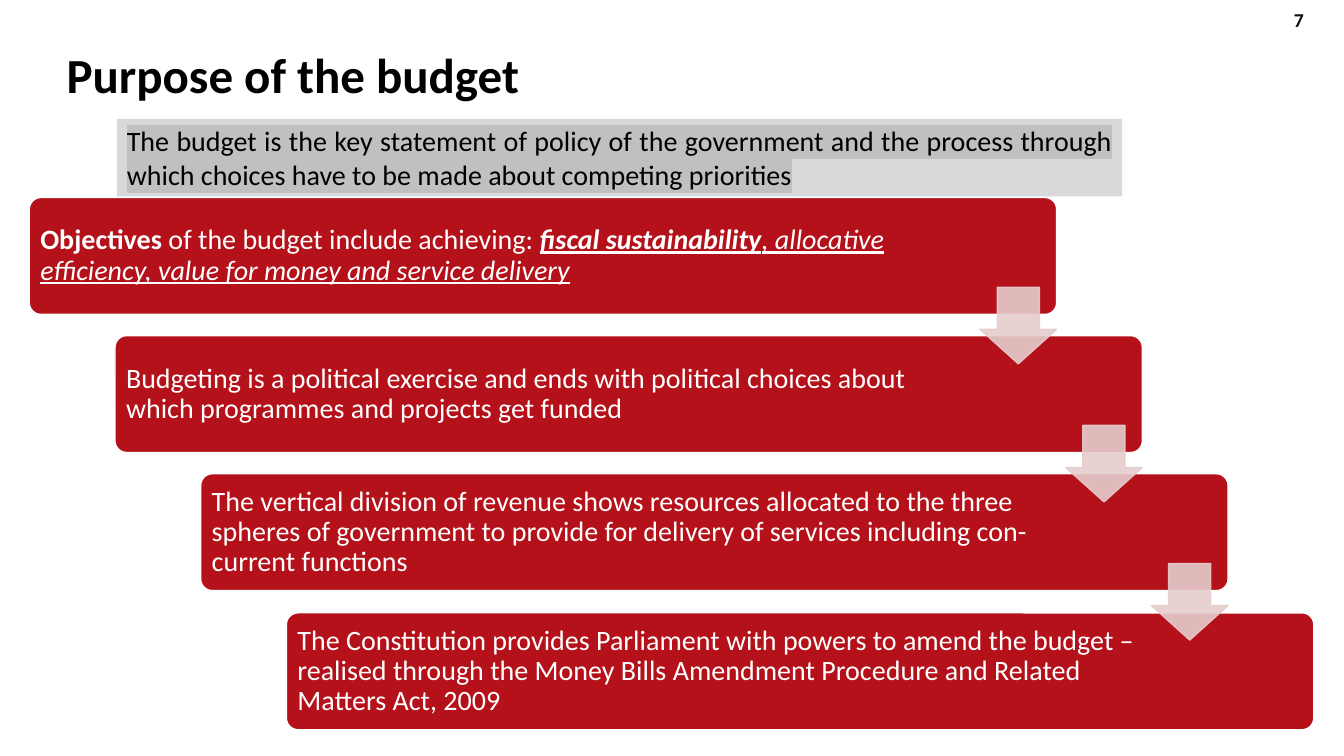
from lxml.etree import SubElement
from pptx import Presentation
from pptx.dml.color import RGBColor
from pptx.enum.shapes import MSO_SHAPE
from pptx.enum.text import MSO_ANCHOR, MSO_AUTO_SIZE, PP_ALIGN
from pptx.oxml import parse_xml
from pptx.oxml.ns import nsdecls, qn
from pptx.util import Pt

EMU_PER_PX = 9144
COLOURS = {
    "black": "000000",
    "page number": "0D0D0D",
    "white": "FFFFFF",
    "card": "B5111A",
    "arrow": "E5CCCD",
    "panel": "D9D9D9",
    "highlight": "C0C0C0",
}
STATEMENT = (
    "The budget is the key statement of policy of the government and the process "
    "through which choices have to be made about competing priorities"
)
# Each step is a list of (text, styles): b is bold, i italic, u underlined.
STEPS = [
    [
        ("Objectives", "b"),
        (" of the budget include achieving: ", ""),
        ("fiscal sustainability", "biu"),
        (", allocative efficiency, value for money and service delivery", "iu"),
    ],
    [("Budgeting is a political exercise and ends with political choices about "
      "which programmes and projects get funded", "")],
    [("The vertical division of revenue shows resources allocated to the three "
      "spheres of government to provide for delivery of services including "
      "con-current functions", "")],
    [("The Constitution provides Parliament with powers to amend the budget – "
      "realised through the Money Bills Amendment Procedure and Related Matters "
      "Act, 2009", "")],
]
FIRST_LEFT, FIRST_TOP = 29, 196
STEP_RIGHT = 85
THREE_STEPS_DOWN = 412
CARD_WIDTH, CARD_HEIGHT = 1019, 116
ARROW_SIZE = 76


def px(length):
    return length * EMU_PER_PX


def rgb(name):
    return RGBColor.from_string(COLOURS[name])


class BudgetSlide:
    def __init__(self, deck, font="Calibri"):
        self.page = deck.slides.add_slide(deck.slide_layouts[5])
        self.font = font

    def style(self, span, size, colour, styles=""):
        span.font.name = self.font
        span.font.size = Pt(size)
        span.font.color.rgb = rgb(colour)
        span.font.bold = "b" in styles
        span.font.italic = "i" in styles
        span.font.underline = "u" in styles

    def title(self, text, left, top, width, height):
        box = self.page.shapes.title
        box.left, box.top, box.width, box.height = map(px, (left, top, width, height))
        frame = box.text_frame
        frame.text = text
        frame.auto_size = MSO_AUTO_SIZE.NONE
        frame.vertical_anchor = MSO_ANCHOR.TOP
        para = frame.paragraphs[0]
        para.alignment = PP_ALIGN.LEFT
        self.style(para.runs[0], 35, "black", "b")

    def shape(self, kind, left, top, width, height, fill, line=None, adjustments=()):
        shape = self.page.shapes.add_shape(kind, *map(px, (left, top, width, height)))
        shape.shadow.inherit = False
        for index, value in enumerate(adjustments):
            shape.adjustments[index] = value
        shape.fill.solid()
        shape.fill.fore_color.rgb = rgb(fill)
        if line:
            shape.line.color.rgb = rgb(line)
            shape.line.width = Pt(1)
        else:
            shape.line.fill.background()
        return shape

    def text(self, spans, left, top, width, height, size, colour, align=PP_ALIGN.LEFT):
        box = self.page.shapes.add_textbox(*map(px, (left, top, width, height)))
        frame = box.text_frame
        frame.word_wrap = True
        frame.vertical_anchor = MSO_ANCHOR.MIDDLE
        para = frame.paragraphs[0]
        para.alignment = align
        for words, styles in spans:
            span = para.add_run()
            span.text = words
            self.style(span, size, colour, styles)
        return frame

    def card(self, spans, left, top, text_width):
        self.shape(MSO_SHAPE.ROUNDED_RECTANGLE, left, top, CARD_WIDTH, CARD_HEIGHT,
                   "card", "white", [0.1])
        frame = self.text(spans, left + 3, top + 3, text_width, CARD_HEIGHT - 6, 20, "white")
        frame.margin_left = frame.margin_right = px(8)
        frame.margin_top = frame.margin_bottom = px(8)
        frame.paragraphs[0].line_spacing = 0.9

    def arrow(self, left, top):
        arrow = self.shape(MSO_SHAPE.DOWN_ARROW, left, top, ARROW_SIZE, ARROW_SIZE,
                           "arrow", "arrow", [0.55, 0.45])
        for colour in arrow.fill._xPr.iter(qn("a:srgbClr")):
            SubElement(colour, qn("a:alpha"), val="90000")

    def statement(self, text, left, top, width, height):
        panel = self.shape(MSO_SHAPE.RECTANGLE, left, top, width, height, "panel")
        frame = panel.text_frame
        frame.text = text
        frame.word_wrap = True
        frame.auto_size = MSO_AUTO_SIZE.SHAPE_TO_FIT_TEXT
        frame.vertical_anchor = MSO_ANCHOR.TOP
        para = frame.paragraphs[0]
        para.alignment = PP_ALIGN.JUSTIFY
        span = para.runs[0]
        self.style(span, 20, "black")
        highlight = parse_xml(
            f'<a:highlight {nsdecls("a")}>'
            f'<a:srgbClr val="{COLOURS["highlight"]}"/></a:highlight>'
        )
        span._r.rPr.find(qn("a:solidFill")).addnext(highlight)


def main():
    deck = Presentation()
    deck.slide_width, deck.slide_height = px(1333), px(750)
    slide = BudgetSlide(deck)
    slide.text([("7", "b")], 1244, 0, 59, 40, 14, "page number", PP_ALIGN.RIGHT)

    corners = [
        (FIRST_LEFT + STEP_RIGHT * index, FIRST_TOP + THREE_STEPS_DOWN * index // 3)
        for index in range(len(STEPS))
    ]
    for index, (spans, (left, top)) in enumerate(zip(STEPS, corners)):
        slide.card(spans, left, top, 883 if index == 0 else 851)
    for left, top in corners[:-1]:
        slide.arrow(left + CARD_WIDTH - ARROW_SIZE, top + 89)

    slide.statement(STATEMENT, 116, 118, 997, 77)
    slide.title("Purpose of the budget", 56, 39, 1138, 69)
    deck.save("out.pptx")


if __name__ == "__main__":
    main()
